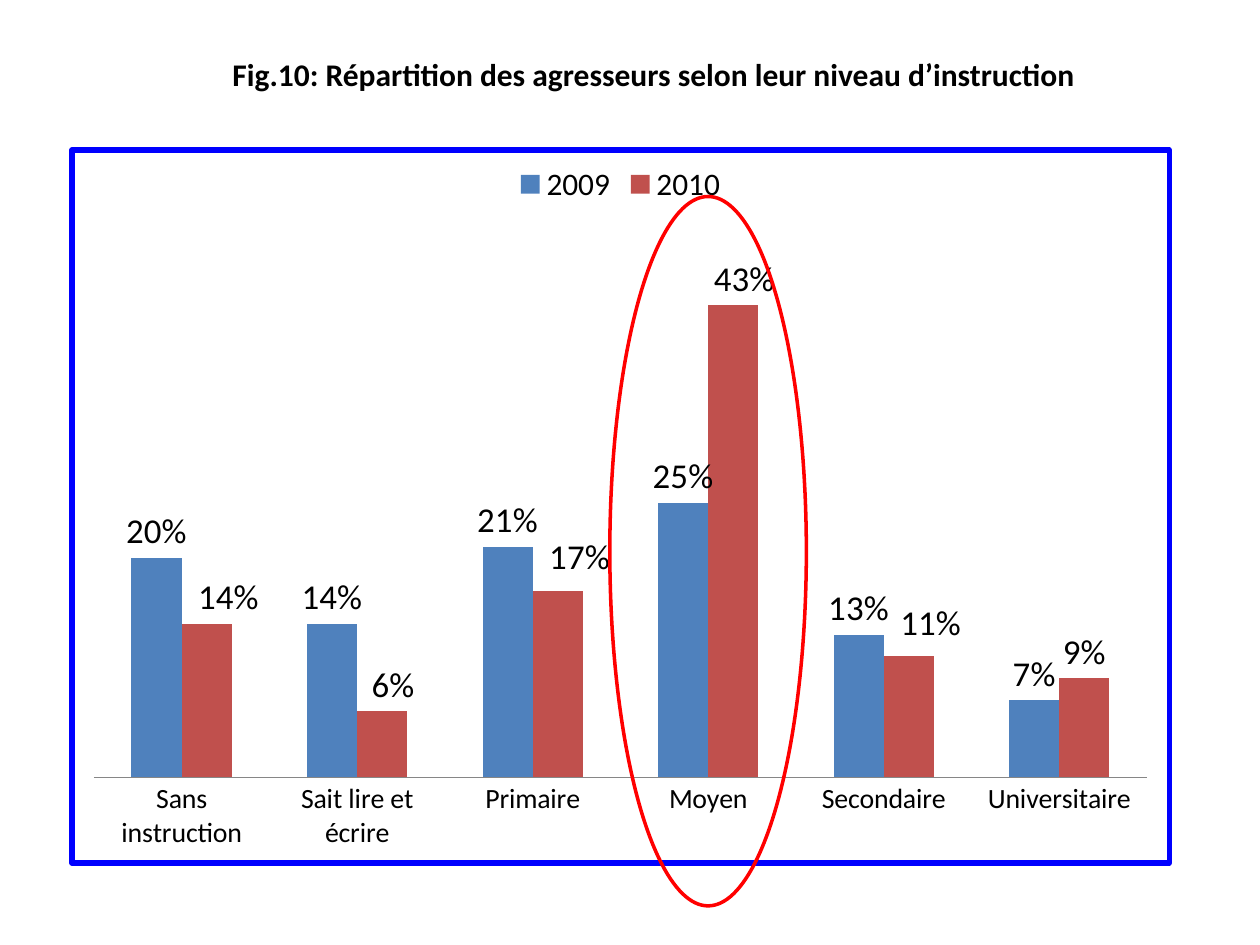
import lxml.etree
import pptx
import pptx.chart.data
import pptx.dml.color
import pptx.enum.chart
import pptx.enum.shapes
import pptx.enum.text
import pptx.oxml
import pptx.oxml.ns
import pptx.util

RGBColor = pptx.dml.color.RGBColor
Pt = pptx.util.Pt
BLACK = RGBColor(0x00, 0x00, 0x00)
GREY = RGBColor(0x86, 0x86, 0x86)
RED = RGBColor(0xFF, 0x00, 0x00)
FRAME_BLUE = RGBColor(0x00, 0x00, 0xFF)
SERIES_COLORS = [RGBColor(0x4F, 0x81, 0xBD), RGBColor(0xC0, 0x50, 0x4D)]
FONT = "Calibri"

LEVELS = {
    "Sans instruction": (0.20, 0.14),
    "Sait lire et écrire": (0.14, 0.06),
    "Primaire": (0.21, 0.17),
    "Moyen": (0.25, 0.43),
    "Secondaire": (0.13, 0.11),
    "Universitaire": (0.07, 0.09),
}
# Shifts of the 2010 labels, as shares of the chart's width and height
LABEL_SHIFTS = [(0.02, 0), (0.01, 0), (0.02, -0.01), (0.01, 0), (0.02, -0.01)]


def write_text(frame, text, size, color=BLACK, bold=False, align=None):
    para = frame.paragraphs[0]
    para.alignment = align
    span = para.add_run()
    span.text = text
    span.font.name = FONT
    span.font.size = Pt(size)
    span.font.bold = bold
    span.font.color.rgb = color


def chart_layout(**values):
    """Return a manual c:layout element holding the given settings in order."""
    parts = "".join(f'<c:{name} val="{value}"/>' for name, value in values.items())
    return pptx.oxml.parse_xml(
        f'<c:layout {pptx.oxml.ns.nsdecls("c")}>'
        f"<c:manualLayout>{parts}</c:manualLayout></c:layout>"
    )


deck = pptx.Presentation()
deck.slide_width = pptx.util.Inches(10)
deck.slide_height = pptx.util.Inches(7.5)
page = deck.slides.add_slide(deck.slide_layouts[5])


def place(left, top, width, height):
    """Turn inches into a left, top, width, height tuple."""
    return tuple(pptx.util.Inches(length) for length in (left, top, width, height))


# Title
title = page.shapes.title
title.left, title.top, title.width, title.height = place(1.72, 0.39, 6.94, 0.4)
title.text_frame.word_wrap = False
title.text_frame.auto_size = pptx.enum.text.MSO_AUTO_SIZE.SHAPE_TO_FIT_TEXT
title.text_frame.vertical_anchor = pptx.enum.text.MSO_ANCHOR.MIDDLE
write_text(
    title.text_frame,
    "Fig.10: Répartition des agresseurs selon leur niveau d’instruction",
    size=18,
    bold=True,
    align=pptx.enum.text.PP_ALIGN.CENTER,
)

# Chart
data = pptx.chart.data.CategoryChartData(number_format="0%")
data.categories = list(LEVELS)
for year, shares in zip(("2009", "2010"), zip(*LEVELS.values())):
    data.add_series(year, shares)
chart = page.shapes.add_chart(
    pptx.enum.chart.XL_CHART_TYPE.COLUMN_CLUSTERED, *place(0.55, 1.17, 8.75, 5.7), data
).chart
chart.has_title = False
chart.font.name = FONT
chart.font.size = Pt(10)
chart.font.color.rgb = BLACK

chart.has_legend = True
chart.legend.position = pptx.enum.chart.XL_LEGEND_POSITION.TOP
chart.legend.include_in_layout = False
chart.legend.font.size = Pt(18)

chart.category_axis.major_tick_mark = pptx.enum.chart.XL_TICK_MARK.NONE
chart.category_axis.tick_labels.font.size = Pt(16)
chart.category_axis.format.line.color.rgb = GREY
chart.value_axis.visible = False
chart.value_axis.has_major_gridlines = False
chart.value_axis.minimum_scale = 0
chart.value_axis.maximum_scale = 0.5

plot = chart.plots[0]
plot.gap_width = 150
plot.overlap = 0
plot.vary_by_categories = False
OUTSIDE = pptx.enum.chart.XL_LABEL_POSITION.OUTSIDE_END
for series, color in zip(plot.series, SERIES_COLORS):
    series.format.fill.solid()
    series.format.fill.fore_color.rgb = color
    labels = series.data_labels
    labels.show_value = True
    labels.number_format = "0%"
    labels.number_format_is_linked = False
    labels.position = OUTSIDE
    labels.font.size = Pt(20)

for index in range(len(LABEL_SHIFTS)):
    label = plot.series[1].points[index].data_label
    label.position = OUTSIDE
    label.font.size = Pt(20)
for label, (across, down) in zip(chart.element.xpath(".//c:dLbl"), LABEL_SHIFTS):
    label[0].addnext(chart_layout(x=across, y=down))

# Inner plot area and chart frame
plot_area = chart.element.xpath(".//c:plotArea")[0]
for layout in plot_area.xpath("c:layout"):
    plot_area.remove(layout)
plot_area.insert(0, chart_layout(
    layoutTarget="inner", xMode="edge", yMode="edge", x=0.02, y=0.11, w=0.96, h=0.77
))
chart.element.xpath("c:chart")[0].addnext(pptx.oxml.parse_xml(
    f'<c:spPr {pptx.oxml.ns.nsdecls("c", "a")}><a:noFill/><a:ln w="{Pt(3)}"><a:solidFill>'
    f'<a:srgbClr val="{FRAME_BLUE}"/></a:solidFill></a:ln></c:spPr>'
))

# Highlight around "Moyen"
highlight = page.shapes.add_shape(
    pptx.enum.shapes.MSO_SHAPE.OVAL, *place(4.84, 1.56, 1.56, 5.63)
)
highlight.shadow.inherit = False
highlight.fill.background()
highlight.line.color.rgb = RED
highlight.line.width = Pt(2)

deck.save("out.pptx")
